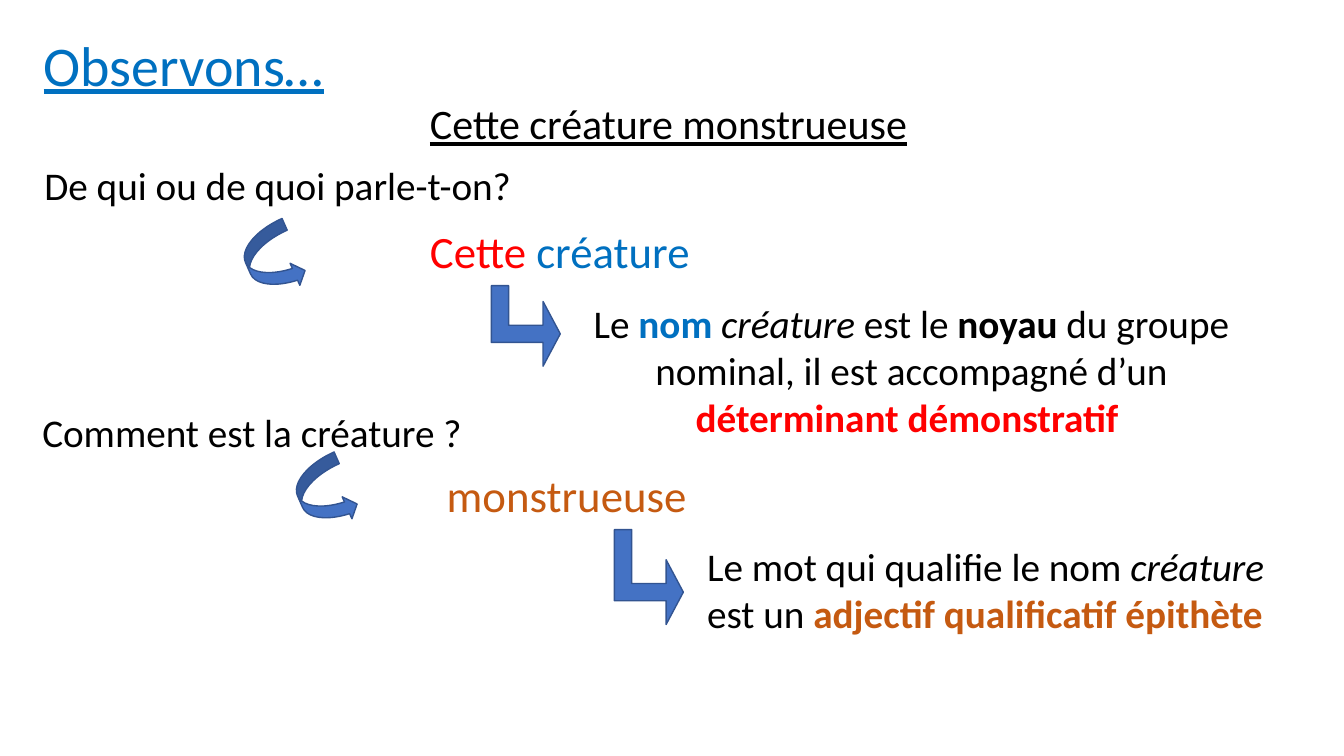
from dataclasses import dataclass

from pptx import Presentation
from pptx.dml.color import RGBColor
from pptx.enum.shapes import MSO_SHAPE
from pptx.enum.text import MSO_ANCHOR, MSO_AUTO_SIZE, PP_ALIGN
from pptx.slide import Slide
from pptx.text.text import _Paragraph
from pptx.util import Inches, Length, Pt

COLUMNS, ROWS = 160, 90
CELL = Inches(1) / 12
FONT = "Calibri"
COLORS = {
    "text": "000000",
    "noun": "0070C0",
    "determiner": "FF0000",
    "adjective": "C55A11",
    "arrow": "4472C4",
    "arrow_line": "325491",
}


@dataclass(frozen=True)
class Box:
    """A frame given in grid columns and rows."""
    column: float
    row: float
    columns: float
    rows: float

    def lengths(self) -> tuple[Length, ...]:
        return tuple(Length(round(cells * CELL))
                     for cells in (self.column, self.row, self.columns, self.rows))


@dataclass(frozen=True)
class Span:
    text: str
    color: str = "text"
    bold: bool = False
    italic: bool = False


@dataclass(frozen=True)
class Label:
    box: Box
    size: int
    spans: tuple[Span, ...]
    wrap: bool = False
    underline: bool = False
    align: PP_ALIGN = PP_ALIGN.LEFT


@dataclass(frozen=True)
class ArrowStyle:
    preset: MSO_SHAPE
    rotation: float
    adjustments: tuple[float, ...]


@dataclass(frozen=True)
class Arrow:
    box: Box
    style: ArrowStyle


TITLE = Label(Box(4, 3, 36, 10.2), 40, (Span("Observons…", "noun"),),
              wrap=True, underline=True)

LABELS = (
    Label(Box(50, 11, 59.9, 7.3), 30, (Span("Cette créature monstrueuse"),),
          underline=True),
    Label(Box(4.1, 18.6, 58.8, 6.8), 28, (Span("De qui ou de quoi parle-t-on?"),)),
    Label(Box(50, 26, 33.7, 7.7), 32,
          (Span("Cette ", "determiner"), Span("créature", "noun"))),
    Label(Box(65, 35, 87, 18.1), 28, (
        Span("Le "),
        Span("nom ", "noun", bold=True),
        Span("créature ", italic=True),
        Span("est le"),
        Span(" noyau ", bold=True),
        Span("du groupe nominal, il est accompagné d’un "),
        Span("déterminant démonstratif ", "determiner", bold=True),
    ), wrap=True, align=PP_ALIGN.CENTER),
    Label(Box(3.85, 48, 52.9, 6.8), 28, (Span("Comment est la créature ?"),)),
    Label(Box(52, 55.1, 32, 7.7), 32, (Span("monstrueuse", "adjective"),), wrap=True),
    Label(Box(83, 64, 74, 12.5), 28, (
        Span("Le mot qui qualifie le nom "),
        Span("créature ", italic=True),
        Span("est un "),
        Span("adjectif qualificatif épithète", "adjective", bold=True),
    ), wrap=True),
)

ANSWER = ArrowStyle(MSO_SHAPE.CURVED_RIGHT_ARROW, 336.1, (0.25, 0.47, 0.21))
EXPLANATION = ArrowStyle(MSO_SHAPE.BENT_UP_ARROW, 90, (0.25, 0.47, 0.25))

ARROWS = (
    Arrow(Box(29.4, 26.9, 6.1, 8.2), ANSWER),
    Arrow(Box(35.6, 54.7, 6.1, 8.2), ANSWER),
    Arrow(Box(57.8, 34.7, 9.6, 8.2), EXPLANATION),
    Arrow(Box(71.6, 64.6, 11.3, 8.2), EXPLANATION),
)


def color(name: str) -> RGBColor:
    return RGBColor.from_string(COLORS[name])


def write_label(paragraph: _Paragraph, label: Label) -> None:
    paragraph.alignment = label.align
    paragraph.font.name = FONT
    paragraph.font.size = Pt(label.size)
    paragraph.font.underline = label.underline
    for span in label.spans:
        run = paragraph.add_run()
        run.text = span.text
        run.font.color.rgb = color(span.color)
        run.font.bold = span.bold
        run.font.italic = span.italic


def set_title(slide: Slide) -> None:
    title = slide.shapes.title
    title.left, title.top, title.width, title.height = TITLE.box.lengths()
    frame = title.text_frame
    frame.word_wrap = TITLE.wrap
    frame.auto_size = MSO_AUTO_SIZE.NONE
    frame.vertical_anchor = MSO_ANCHOR.MIDDLE
    write_label(frame.paragraphs[0], TITLE)
    frame.paragraphs[0].line_spacing = 0.9


def add_label(slide: Slide, label: Label) -> None:
    frame = slide.shapes.add_textbox(*label.box.lengths()).text_frame
    frame.word_wrap = label.wrap
    frame.auto_size = MSO_AUTO_SIZE.SHAPE_TO_FIT_TEXT
    write_label(frame.paragraphs[0], label)


def add_arrow(slide: Slide, arrow: Arrow) -> None:
    shape = slide.shapes.add_shape(arrow.style.preset, *arrow.box.lengths())
    shape.rotation = arrow.style.rotation
    for index, value in enumerate(arrow.style.adjustments):
        shape.adjustments[index] = value
    shape.shadow.inherit = False
    shape.fill.solid()
    shape.fill.fore_color.rgb = color("arrow")
    shape.line.color.rgb = color("arrow_line")
    shape.line.width = Pt(1)


def main() -> None:
    presentation = Presentation()
    presentation.slide_width = Length(round(COLUMNS * CELL))
    presentation.slide_height = Length(round(ROWS * CELL))
    title_only = presentation.slide_layouts.get_by_name("Title Only")
    slide = presentation.slides.add_slide(title_only)
    set_title(slide)
    for label in LABELS:
        add_label(slide, label)
    for arrow in ARROWS:
        add_arrow(slide, arrow)
    presentation.save("out.pptx")


if __name__ == "__main__":
    main()
